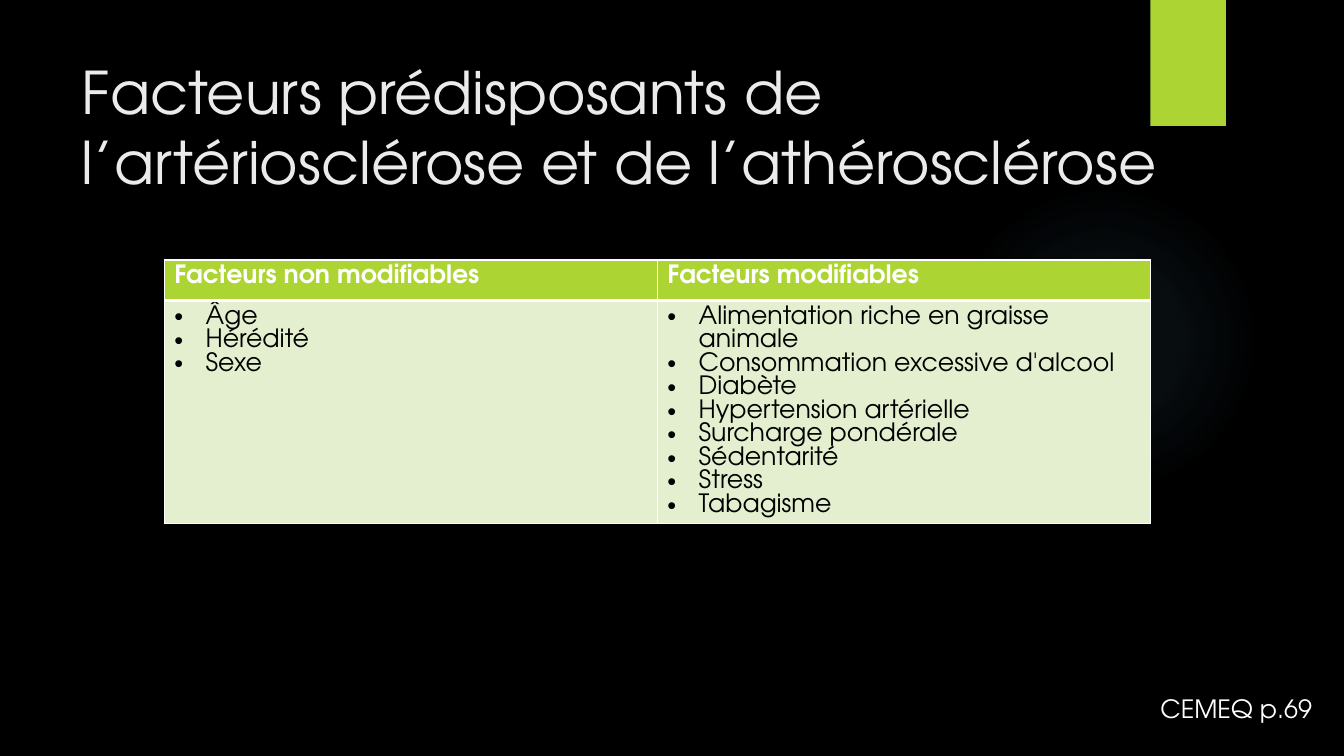
import pptx
import pptx.util
import pptx.dml.color
import pptx.enum.shapes
import pptx.enum.text
import pptx.oxml
import pptx.oxml.ns

Inches, Pt = pptx.util.Inches, pptx.util.Pt
RGB = pptx.dml.color.RGBColor
SHAPE = pptx.enum.shapes.MSO_SHAPE

TITLE = "Facteurs prédisposants de l’artériosclérose et de l’athérosclérose"
SOURCE = "CEMEQ p.69"
FACTORS = {
    "Facteurs non modifiables": ["Âge", "Hérédité", "Sexe"],
    "Facteurs modifiables": [
        "Alimentation riche en graisse animale",
        "Consommation excessive d'alcool",
        "Diabète",
        "Hypertension artérielle",
        "Surcharge pondérale",
        "Sédentarité",
        "Stress",
        "Tabagisme",
    ],
}
ROWS = (0.4, 2.21)
COL = 4.89
INDENT = 0.31
FONT = "TeX Gyre Adventor"
BLACK = RGB(0, 0, 0)
WHITE = RGB(255, 255, 255)
PALE = RGB(0xEB, 0xEB, 0xEB)
LIME = RGB(0xAC, 0xD4, 0x33)
MINT = RGB(0xE3, 0xEF, 0xCE)
GLOW = RGB(0x7A, 0xC4, 0xF0)
STOPS = ((0, 7), (36, 6), (69, 0))  # position and opacity, in percent
NS = pptx.oxml.ns.nsdecls("a")


def box(*sizes):
    return [Inches(size) for size in sizes]


def style(par, size, color, bold=False):
    font = par.font
    font.name, font.size, font.bold = FONT, Pt(size), bold
    font.color.rgb = color


def add_xml(parent, xml):
    parent.append(pptx.oxml.parse_xml(xml))


def add_shape(kind, *sizes):
    shape = slide.shapes.add_shape(kind, *box(*sizes))
    shape.shadow.inherit = False
    shape.line.fill.background()
    return shape


def add_bullet(par):
    props = par._p.get_or_add_pPr()
    props.set("marL", str(Inches(INDENT)))
    props.set("indent", str(-Inches(INDENT)))
    add_xml(props, f'<a:buFont {NS} typeface="Arial"/>')
    add_xml(props, f'<a:buChar {NS} char="•"/>')


def fill_cell(cell, lines, fill, color, head):
    props = cell._tc.get_or_add_tcPr()
    for side in "LRTB":
        wide = 3 if side == ("B" if head else "T") else 1
        add_xml(props, f'<a:ln{side} {NS} w="{Pt(wide)}"><a:solidFill>'
                       f'<a:srgbClr val="{WHITE}"/></a:solidFill></a:ln{side}>')
    cell.fill.solid()
    cell.fill.fore_color.rgb = fill
    cell.text = "\n".join(lines)
    for par in cell.text_frame.paragraphs:
        if not head:
            add_bullet(par)
        style(par, 18, color, head)


deck = pptx.Presentation()
deck.slide_width, deck.slide_height = box(13.33, 7.5)
slide = deck.slides.add_slide(deck.slide_layouts[5])
slide.background.fill.solid()
slide.background.fill.fore_color.rgb = BLACK

glow = add_shape(SHAPE.OVAL, 9.41, 1.83, 3.08, 3.08)
glow.fill.background()
stops = "".join(
    f'<a:gs pos="{pos * 1000}"><a:srgbClr val="{GLOW}">'
    f'<a:alpha val="{alpha * 1000}"/></a:srgbClr></a:gs>'
    for pos, alpha in STOPS)
blank = glow._element.spPr.find(pptx.oxml.ns.qn("a:noFill"))
blank.getparent().replace(blank, pptx.oxml.parse_xml(
    f'<a:gradFill {NS}><a:gsLst>{stops}</a:gsLst><a:path path="circle">'
    '<a:fillToRect l="50000" t="50000" r="50000" b="50000"/></a:path></a:gradFill>'))

tab = add_shape(SHAPE.RECTANGLE, 11.41, 0, 0.75, 1.25)
tab.fill.solid()
tab.fill.fore_color.rgb = LIME

title = slide.shapes.title
title.left, title.top, title.width, title.height = box(0.71, 0.5, 11.66, 1.53)
title.text = TITLE
title.text_frame.vertical_anchor = pptx.enum.text.MSO_ANCHOR.TOP
title.text_frame.auto_size = pptx.enum.text.MSO_AUTO_SIZE.NONE
title.text_frame.paragraphs[0].alignment = pptx.enum.text.PP_ALIGN.LEFT
style(title.text_frame.paragraphs[0], 42, PALE)

table = slide.shapes.add_table(
    len(ROWS), len(FACTORS), *box(1.63, 2.58, COL * len(FACTORS), sum(ROWS))).table
for row, height in zip(table.rows, ROWS):
    row.height = Inches(height)
for col, (head, items) in enumerate(FACTORS.items()):
    table.columns[col].width = Inches(COL)
    fill_cell(table.cell(0, col), [head], LIME, WHITE, True)
    fill_cell(table.cell(1, col), items, MINT, BLACK, False)

note = slide.shapes.add_textbox(*box(11.41, 6.83, 1.72, 0.4)).text_frame
note.word_wrap = False
note.auto_size = pptx.enum.text.MSO_AUTO_SIZE.SHAPE_TO_FIT_TEXT
note.text = SOURCE
note.paragraphs[0].space_after = Pt(6)
style(note.paragraphs[0], 18, WHITE)

deck.save("out.pptx")
